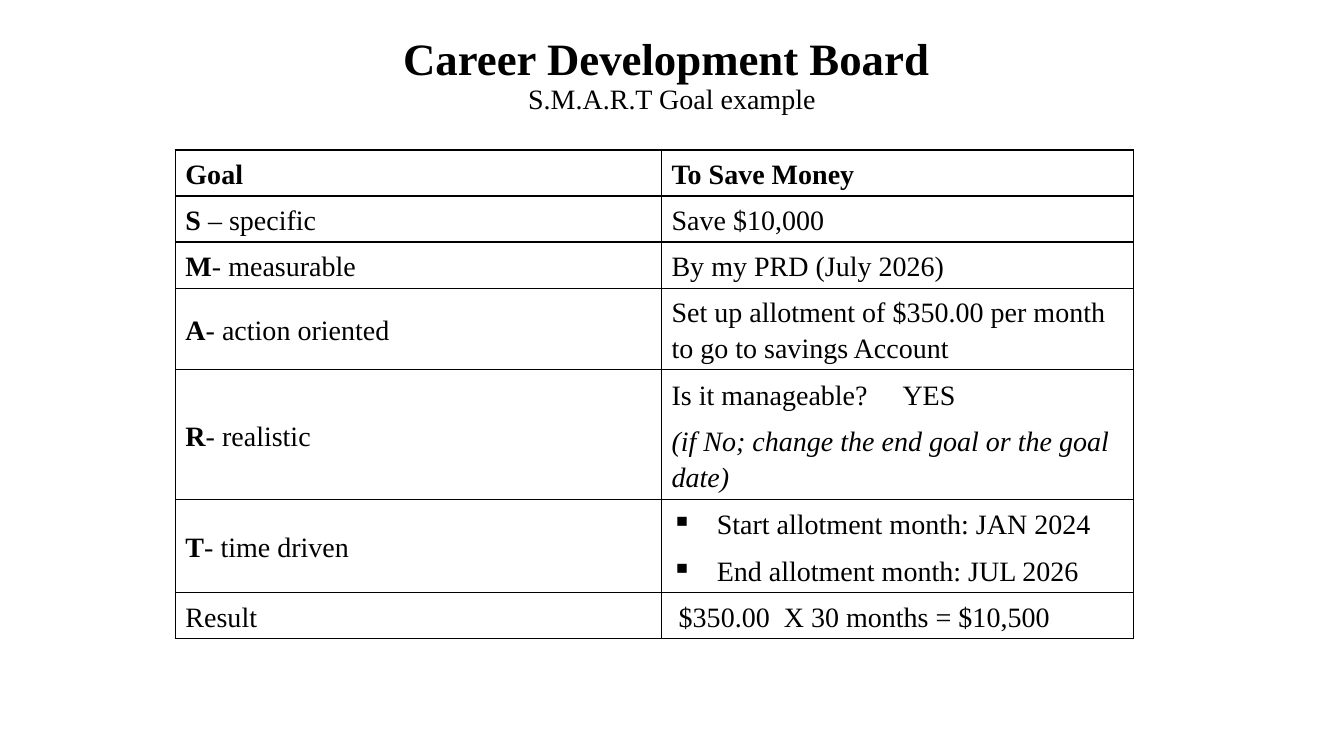
from lxml import etree
from pptx import Presentation
from pptx.dml.color import RGBColor
from pptx.enum import text
from pptx.oxml import ns
from pptx.util import Cm, Pt

THEME = {
    "font": "Times New Roman",
    "ink": "000000",
    "title_size": 32,
    "body_size": 20,
    "border": Pt(1),
}

TITLE = "Career Development Board "
SUBTITLE = "S.M.A.R.T Goal example"

# Each row: bold start, rest of the label, answer paragraphs, height in cm.
# An answer is a text with the format that sets it apart.
ROWS = [
    ("Goal", "", [("To Save Money", {"bold": True})], 1.16),
    ("S", " – specific", [("Save $10,000", {})], 1.16),
    ("M", "- measurable", [("By my PRD (July 2026)", {})], 1.16),
    ("A", "- action oriented",
     [("Set up allotment of $350.00 per month to go to savings Account", {})], 2.05),
    ("R", "- realistic",
     [("Is it manageable?\tYES", {"tab": Cm(5.82)}),
      ("(if No; change the end goal or the goal date)", {"italic": True})], 3.27),
    ("T", "- time driven",
     [("Start allotment month: JAN 2024", {"bullet": "▪", "indent": Cm(1.14)}),
      ("End allotment month: JUL 2026", {"bullet": "▪", "indent": Cm(1.14)})], 2.33),
    ("", "Result", [("$350.00  X 30 months = $10,500", {"indent": Cm(0.18)})], 1.16),
]

TABLE_LEFT, TABLE_TOP = Cm(4.42), Cm(3.78)
COLUMN_WIDTHS = [Cm(12.25), Cm(11.9)]
TITLE_TOP, TITLE_HEIGHT = Cm(0.03), Cm(3.76)


def write(paragraph, words, size=THEME["body_size"], bold=False, italic=False,
          bullet=None, indent=0, tab=None):
    """Append one run to the paragraph, with its bullet, indent and tab stop."""
    props = paragraph._p.get_or_add_pPr()
    if indent:
        props.set("marL", str(indent))
        props.set("indent", str(-indent if bullet else 0))
    if bullet:
        etree.SubElement(props, ns.qn("a:buChar"), char=bullet)
    if tab:
        stops = etree.SubElement(props, ns.qn("a:tabLst"))
        etree.SubElement(stops, ns.qn("a:tab"), pos=str(tab), algn="l")
    run = paragraph.add_run()
    run.text = words
    run.font.name = THEME["font"]
    run.font.size = Pt(size)
    run.font.bold = bold
    run.font.italic = italic
    run.font.color.rgb = RGBColor.from_string(THEME["ink"])


def add_borders(cell):
    props = cell._tc.get_or_add_tcPr()
    for position, side in enumerate(("a:lnL", "a:lnR", "a:lnT", "a:lnB")):
        line = etree.Element(ns.qn(side), w=str(THEME["border"]))
        fill = etree.SubElement(line, ns.qn("a:solidFill"))
        etree.SubElement(fill, ns.qn("a:srgbClr"), val=THEME["ink"])
        props.insert(position, line)


def fill_cell(cell, paragraphs):
    """Write paragraphs, each a list of (words, format) runs, into a bordered cell."""
    cell.fill.background()
    add_borders(cell)
    cell.vertical_anchor = text.MSO_ANCHOR.MIDDLE
    frame = cell.text_frame
    for number, runs in enumerate(paragraphs):
        paragraph = frame.add_paragraph() if number else frame.paragraphs[0]
        paragraph.line_spacing = 1.15
        paragraph.space_after = Pt(8)
        for words, look in runs:
            write(paragraph, words, **look)


def add_title(slide, width):
    box = slide.shapes.add_textbox(0, TITLE_TOP, width, TITLE_HEIGHT)
    frame = box.text_frame
    frame.word_wrap = True
    frame.vertical_anchor = text.MSO_ANCHOR.MIDDLE
    heading = frame.paragraphs[0]
    heading.alignment = text.PP_ALIGN.CENTER
    heading.line_spacing = 0.9
    write(heading, TITLE, size=THEME["title_size"], bold=True)
    heading.add_line_break()
    write(heading, SUBTITLE)


def add_goal_table(slide):
    heights = [Cm(row[-1]) for row in ROWS]
    goals = slide.shapes.add_table(len(ROWS), len(COLUMN_WIDTHS), TABLE_LEFT, TABLE_TOP,
                                   sum(COLUMN_WIDTHS), sum(heights)).table
    goals.first_row = goals.horz_banding = False
    for column, width in zip(goals.columns, COLUMN_WIDTHS):
        column.width = width
    for number, (initial, rest, answers, _) in enumerate(ROWS):
        goals.rows[number].height = heights[number]
        label = [(words, {"bold": bold})
                 for words, bold in ((initial, True), (rest, False)) if words]
        fill_cell(goals.cell(number, 0), [label])
        fill_cell(goals.cell(number, 1), [[answer] for answer in answers])


def main():
    deck = Presentation()
    deck.slide_width, deck.slide_height = Cm(33.87), Cm(19.05)
    slide = deck.slides.add_slide(deck.slide_layouts[6])
    add_goal_table(slide)
    add_title(slide, deck.slide_width)
    deck.save("out.pptx")


if __name__ == "__main__":
    main()
